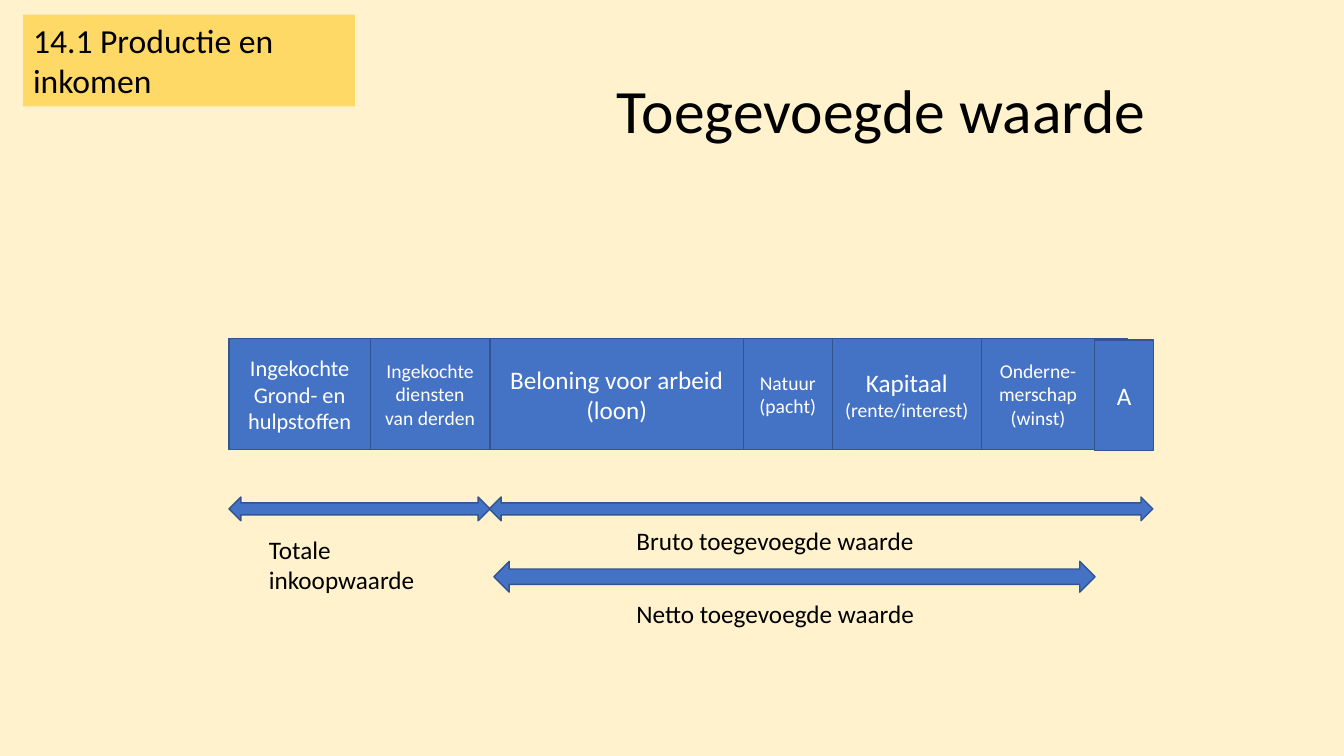
from pptx import Presentation
from pptx.dml.color import RGBColor
from pptx.enum.shapes import MSO_SHAPE as Preset
from pptx.enum.text import MSO_ANCHOR as Anchor, MSO_AUTO_SIZE as AutoSize, PP_ALIGN as Align
from pptx.util import Pt

CREAM = RGBColor(0xFF, 0xF2, 0xCC)
YELLOW = RGBColor(0xFF, 0xD9, 0x66)
BLUE = RGBColor(0x44, 0x72, 0xC4)
NAVY = RGBColor(0x32, 0x54, 0x91)
WHITE = RGBColor(0xFF, 0xFF, 0xFF)
BLACK = RGBColor(0, 0, 0)
FONT = "Calibri"

TITLE = ("Toegevoegde waarde", 44)
CHAPTER = ("14.1 Productie en inkomen", 24)
BAR_LEFT, BAR_TOP, BAR_WIDTH, BAR_HEIGHT = 163.5, 242, 642, 79
SEGMENTS = [
    (101, 0, [("Ingekochte", 16), ("Grond- en hulpstoffen", 16)]),
    (85.5, 0, [("Ingekochte diensten van derden", 14)]),
    (181, 0, [("Beloning voor arbeid", 18), ("(loon)", 18)]),
    (63.5, 0, [("Natuur", 14), ("(pacht)", 14)]),
    (106.5, 0, [("Kapitaal", 18), ("(rente/interest)", 14)]),
    (81, 0, [("Onderne-merschap (winst)", 14)]),
    (42, 0.75, [("A", 18)]),
]
ARROWS = [
    (163.5, 355, 186.5, 17),
    (349.5, 355, 474, 17),
    (352.75, 401, 429.5, 22),
]
LABELS = [
    ("Totale inkoopwaarde", 185, 378, 147.5, 51),
    ("Bruto toegevoegde waarde", 447.5, 372, 358.5, 29),
    ("Netto toegevoegde waarde", 447.5, 423.5, 259, 29),
]


def write(shape, lines, color, align, anchor):
    frame = shape.text_frame
    frame.word_wrap = True
    frame.auto_size = AutoSize.NONE
    frame.vertical_anchor = anchor
    for index, (text, size) in enumerate(lines):
        para = frame.add_paragraph() if index else frame.paragraphs[0]
        para.text = text
        para.alignment = align
        para.font.name = FONT
        para.font.size = Pt(size)
        para.font.color.rgb = color


def add_block(page, preset, left, top, width, height, fill=BLUE, line=NAVY):
    block = page.shapes.add_shape(preset, Pt(left), Pt(top), Pt(width), Pt(height))
    block.shadow.inherit = False
    block.fill.solid()
    block.fill.fore_color.rgb = fill
    if line is None:
        block.line.fill.background()
    else:
        block.line.color.rgb = line
        block.line.width = Pt(1)
    return block


def main():
    deck = Presentation()
    deck.slide_width, deck.slide_height = Pt(960), Pt(540)
    page = deck.slides.add_slide(deck.slide_layouts[5])
    page.background.fill.solid()
    page.background.fill.fore_color.rgb = CREAM

    title = page.shapes.title
    title.left, title.top, title.width, title.height = Pt(433.5), Pt(29), Pt(461), Pt(104)
    write(title, [TITLE], BLACK, Align.LEFT, Anchor.MIDDLE)
    title.text_frame.paragraphs[0].line_spacing = 0.9

    add_block(page, Preset.RECTANGLE, BAR_LEFT, BAR_TOP, BAR_WIDTH, BAR_HEIGHT)
    left = BAR_LEFT
    for width, drop, lines in SEGMENTS:
        segment = add_block(page, Preset.RECTANGLE, left, BAR_TOP + drop, width, BAR_HEIGHT)
        write(segment, lines, WHITE, Align.CENTER, Anchor.MIDDLE)
        left += width

    for arrow in ARROWS:
        add_block(page, Preset.LEFT_RIGHT_ARROW, *arrow)

    for text, *place in LABELS:
        label = page.shapes.add_textbox(*map(Pt, place))
        write(label, [(text, 18)], BLACK, Align.LEFT, Anchor.TOP)

    chapter = add_block(page, Preset.RECTANGLE, 16.5, 10.5, 237, 65.5, YELLOW, None)
    write(chapter, [CHAPTER], BLACK, Align.LEFT, Anchor.TOP)

    deck.save("out.pptx")


if __name__ == "__main__":
    main()
